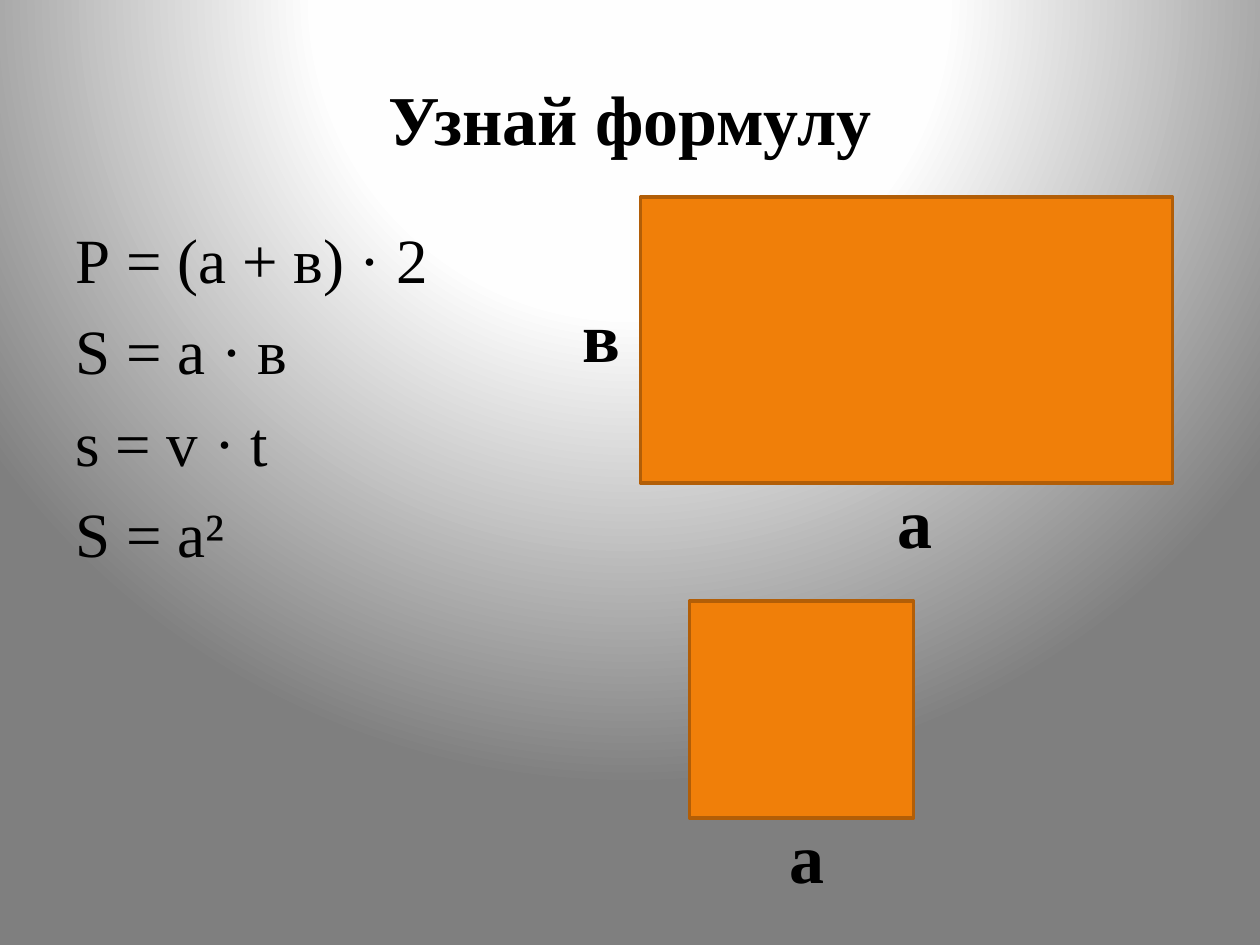
from pptx import Presentation
from pptx.dml.color import RGBColor
from pptx.enum.shapes import MSO_SHAPE
from pptx.enum.text import MSO_ANCHOR, PP_ALIGN
from pptx.oxml import parse_xml
from pptx.oxml.ns import nsdecls
from pptx.util import Pt

BLACK = RGBColor(0x00, 0x00, 0x00)
ORANGE = RGBColor(0xF0, 0x7F, 0x09)
BROWN = RGBColor(0xB2, 0x5E, 0x07)
GLOW = ((0, RGBColor(0xFF, 0xFF, 0xFF)),
        (40, RGBColor(0xFE, 0xFE, 0xFE)),
        (100, RGBColor(0x7F, 0x7F, 0x7F)))
FONT = "Times New Roman"
FORMULAS = ("Р = (а + в) · 2", "S = а · в", "s = v · t", "S = а²")
FIGURES = ((366, 112.5, 304, 163.5), (394, 343.5, 128, 124))
SIDE_LABELS = (("а", 444, 461.5), ("а", 506, 270), ("в", 326, 163.5))


def set_background(slide):
    fill = slide.background.fill
    fill.gradient()
    gradient = slide._element.cSld.bg.bgPr.find(
        "{http://schemas.openxmlformats.org/drawingml/2006/main}gradFill")
    stops = "".join(
        f'<a:gs pos="{position * 1000}"><a:srgbClr val="{color}"/></a:gs>'
        for position, color in GLOW)
    glow = parse_xml(
        f'<a:gradFill {nsdecls("a")} rotWithShape="1"><a:gsLst>{stops}</a:gsLst>'
        '<a:path path="circle"><a:fillToRect l="50000" t="-80000" r="50000" b="180000"/>'
        '</a:path></a:gradFill>')
    gradient.getparent().replace(gradient, glow)


def add_text(slide, lines, left, top, width, height, size=40, bold=True,
             align=PP_ALIGN.LEFT, anchor=MSO_ANCHOR.TOP, space_before=0,
             margin_top=3.6):
    box = slide.shapes.add_textbox(Pt(left), Pt(top), Pt(width), Pt(height))
    frame = box.text_frame
    frame.word_wrap = True
    frame.vertical_anchor = anchor
    frame.margin_top = Pt(margin_top)
    frame.text = "\n".join(lines)
    for paragraph in frame.paragraphs:
        paragraph.alignment = align
        paragraph.space_before = Pt(space_before)
        font = paragraph.runs[0].font
        font.name = FONT
        font.size = Pt(size)
        font.bold = bold
        font.color.rgb = BLACK


def add_rectangle(slide, left, top, width, height):
    shape = slide.shapes.add_shape(
        MSO_SHAPE.RECTANGLE, Pt(left), Pt(top), Pt(width), Pt(height))
    shape.shadow.inherit = False
    shape.fill.solid()
    shape.fill.fore_color.rgb = ORANGE
    shape.line.color.rgb = BROWN
    shape.line.width = Pt(2)


def main():
    """Build the slide of formulas beside a rectangle and a square."""
    presentation = Presentation()
    presentation.slide_width, presentation.slide_height = Pt(720), Pt(540)
    slide = presentation.slides.add_slide(presentation.slide_layouts[6])
    set_background(slide)
    add_text(slide, ["Узнай формулу"], 36, 22, 648, 90,
             align=PP_ALIGN.CENTER, anchor=MSO_ANCHOR.MIDDLE)
    add_text(slide, FORMULAS, 36, 126, 245.5, 250.5, size=36, bold=False,
             space_before=9, margin_top=0)
    for figure in FIGURES:
        add_rectangle(slide, *figure)
    for label, left, top in SIDE_LABELS:
        add_text(slide, [label], left, top, 34.5, 55.5)
    presentation.save("out.pptx")


if __name__ == "__main__":
    main()
